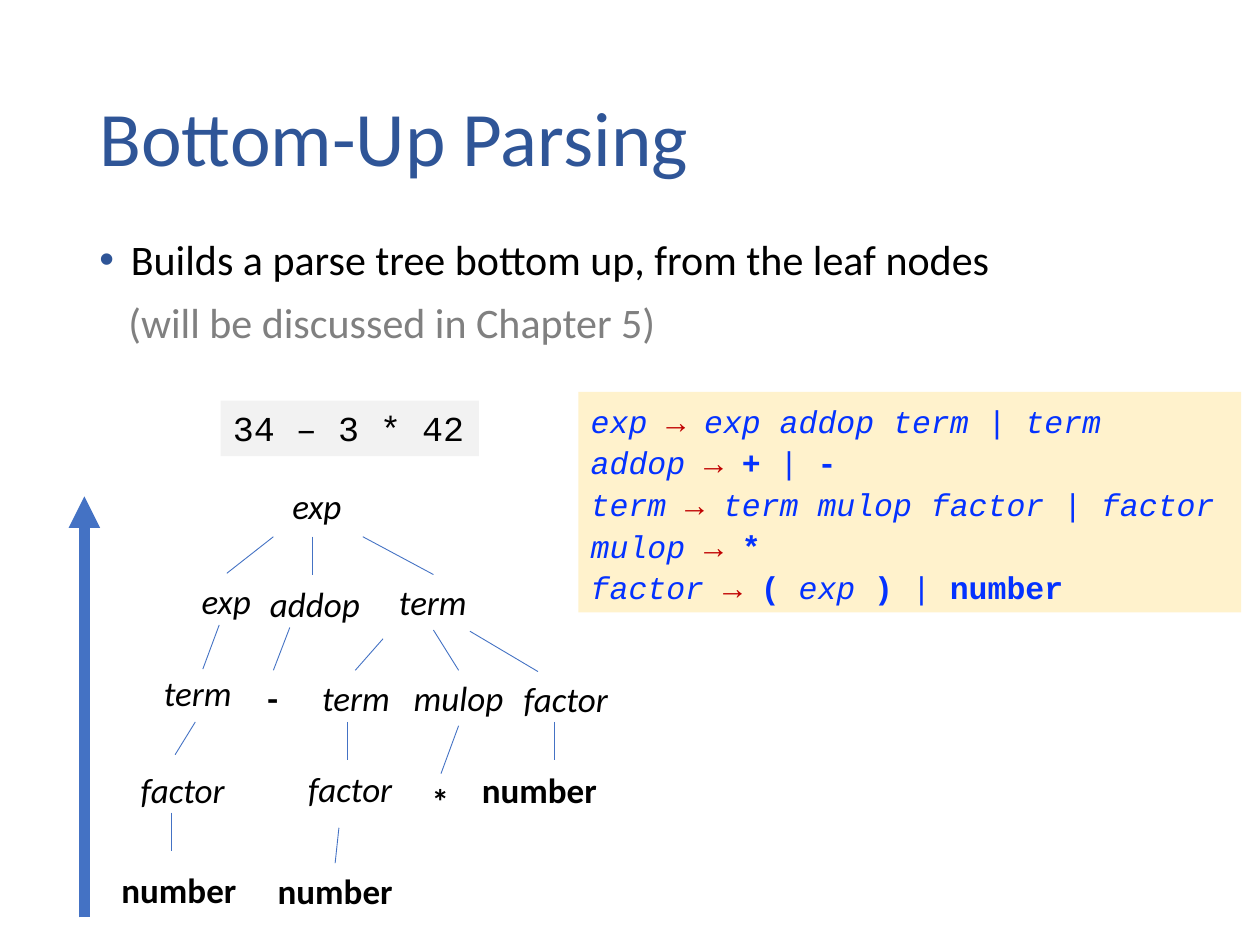
import lxml.etree
import pptx
import pptx.util
import pptx.dml.color
import pptx.enum.shapes
import pptx.enum.text
import pptx.oxml.ns
from typing import NamedTuple

Inches = pptx.util.Inches
Pt = pptx.util.Pt
Align = pptx.enum.text.PP_ALIGN

COLORS = {
    "title": "2F5597", "text": "000000", "muted": "808080",
    "branch": "4472C4", "input": "F2F2F2", "grammar": "FFF2CC",
    "rule": "0432FF", "arrow": "C00000",
}


class Node(NamedTuple):
    label: str
    left: float
    top: float
    width: float
    terminal: bool = False


class Branch(NamedTuple):
    x1: float
    y1: float
    x2: float
    y2: float


class Token(NamedTuple):
    text: str
    color: str = "rule"
    bold: bool = False
    italic: bool = False


def symbol(text: str) -> Token:
    return Token(text, italic=True)


def terminal(text: str) -> Token:
    return Token(text, bold=True)


ARROW = Token("→ ", "arrow")
BAR = Token("| ")

GRAMMAR = [
    [symbol("exp "), ARROW, symbol("exp addop term "), BAR, symbol("term")],
    [symbol("addop "), ARROW, terminal("+ "), BAR, terminal("-")],
    [symbol("term "), ARROW, symbol("term mulop factor "), BAR, symbol("factor")],
    [symbol("mulop "), ARROW, terminal("*")],
    [symbol("factor "), ARROW, terminal("("), symbol(" exp "), terminal(") "),
     BAR, terminal("number")],
]

NODES = [
    Node("exp", 2.22, 3.8, 0.59),
    Node("exp", 1.5, 4.55, 0.59),
    Node("addop", 1.97, 4.57, 1.06),
    Node("term", 3.06, 4.56, 0.75),
    Node("term", 1.12, 5.28, 0.9),
    Node("-", 1.97, 5.32, 0.39, True),
    Node("term", 2.45, 5.32, 0.75),
    Node("mulop", 3.15, 5.32, 0.98),
    Node("factor", 4.05, 5.33, 0.88),
    Node("factor", 1.01, 6.05, 0.88),
    Node("factor", 2.25, 6.04, 1.06),
    Node("*", 3.3, 6.14, 0.39, True),
    Node("number", 3.72, 6.05, 1.12, True),
    Node("number", 0.86, 6.84, 1.12, True),
    Node("number", 2.1, 6.85, 1.12, True),
]

BRANCHES = [
    Branch(2.17, 4.26, 1.8, 4.55),
    Branch(2.48, 4.26, 2.48, 4.56),
    Branch(2.88, 4.26, 3.44, 4.56),
    Branch(1.74, 4.96, 1.61, 5.31),
    Branch(2.3, 4.98, 2.17, 5.32),
    Branch(3.04, 5.07, 2.82, 5.32),
    Branch(3.44, 5, 3.64, 5.32),
    Branch(3.73, 5.01, 4.27, 5.33),
    Branch(1.55, 5.73, 1.39, 5.99),
    Branch(2.76, 5.73, 2.76, 6.03),
    Branch(3.64, 5.76, 3.5, 6.14),
    Branch(4.4, 5.73, 4.4, 6.03),
    Branch(1.36, 6.45, 1.36, 6.75),
    Branch(2.69, 6.57, 2.66, 6.85),
]


def rgb(name: str) -> pptx.dml.color.RGBColor:
    return pptx.dml.color.RGBColor.from_string(COLORS[name])


def add_element(parent, tag: str, **attributes: str):
    return lxml.etree.SubElement(parent, pptx.oxml.ns.qn(tag), attributes)


def format_run(run, size: float, color: str, face: str = "Calibri",
               bold: bool = False, italic: bool = False) -> None:
    run.font.size = Pt(size)
    run.font.name = face
    run.font.bold = bold
    run.font.italic = italic
    run.font.color.rgb = rgb(color)


def add_branch(slide, branch: Branch, width: float = 0.5, arrowhead: bool = False) -> None:
    line = slide.shapes.add_connector(
        pptx.enum.shapes.MSO_CONNECTOR.STRAIGHT, *map(Inches, branch))
    line.line.color.rgb = rgb("branch")
    line.line.width = Pt(width)
    properties = line._element.spPr
    if arrowhead:
        add_element(properties.find(pptx.oxml.ns.qn("a:ln")), "a:tailEnd", type="triangle")
    add_element(properties, "a:effectLst")


def add_node(slide, node: Node) -> None:
    frame = slide.shapes.add_textbox(
        Inches(node.left), Inches(node.top), Inches(node.width), Inches(0.44)).text_frame
    frame.word_wrap = False
    frame.text = node.label
    frame.paragraphs[0].alignment = Align.CENTER
    format_run(frame.paragraphs[0].runs[0], 20, "text",
               bold=node.terminal, italic=not node.terminal)


def add_panel(slide, left: float, top: float, width: float, height: float, fill: str):
    panel = slide.shapes.add_shape(
        pptx.enum.shapes.MSO_SHAPE.RECTANGLE,
        Inches(left), Inches(top), Inches(width), Inches(height))
    panel.shadow.inherit = False
    panel.fill.solid()
    panel.fill.fore_color.rgb = rgb(fill)
    panel.line.fill.background()
    panel.text_frame.vertical_anchor = pptx.enum.text.MSO_ANCHOR.TOP
    return panel.text_frame


def add_title(slide) -> None:
    title = slide.shapes.title
    title.left, title.top, title.width, title.height = map(Inches, (0.69, 0.4, 8.62, 1.45))
    title.text_frame.text = "Bottom-Up Parsing"
    title.text_frame.vertical_anchor = pptx.enum.text.MSO_ANCHOR.MIDDLE
    heading = title.text_frame.paragraphs[0]
    heading.alignment = Align.LEFT
    heading.line_spacing = 0.9
    format_run(heading.runs[0], 44, "title")


def add_summary(slide) -> None:
    frame = slide.shapes.add_textbox(*map(Inches, (0.69, 1.85, 9.31, 1.14))).text_frame
    frame.word_wrap = True
    frame.text = ("Builds a parse tree bottom up, from the leaf nodes\n"
                  "(will be discussed in Chapter 5)")
    claim, remark = frame.paragraphs
    for paragraph, color, margin in ((claim, "text", 0.25), (remark, "muted", 0.23)):
        paragraph.line_spacing = 0.9
        paragraph.space_before = Pt(10)
        paragraph._p.get_or_add_pPr().set("marL", str(Inches(margin)))
        format_run(paragraph.runs[0], 24, color)
    properties = claim._p.get_or_add_pPr()
    properties.set("indent", str(Inches(-0.25)))
    add_element(add_element(properties, "a:buClr"), "a:srgbClr", val=COLORS["title"])
    add_element(properties, "a:buFont", typeface="Arial")
    add_element(properties, "a:buChar", char="•")


def add_grammar(slide) -> None:
    frame = add_panel(slide, 4.59, 3.11, 5.26, 1.75, "grammar")
    frame.word_wrap = True
    for index, rule in enumerate(GRAMMAR):
        paragraph = frame.add_paragraph() if index else frame.paragraphs[0]
        paragraph.alignment = Align.LEFT
        paragraph.line_spacing = 1.1
        for token in rule:
            run = paragraph.add_run()
            run.text = token.text
            format_run(run, 18, token.color, "Courier New", token.bold, token.italic)


def add_input(slide) -> None:
    frame = add_panel(slide, 1.75, 3.18, 2.05, 0.44, "input")
    frame.word_wrap = False
    frame.text = "34 – 3 * 42"
    frame.paragraphs[0].alignment = Align.LEFT
    format_run(frame.paragraphs[0].runs[0], 20, "text", "Courier New")


def main() -> None:
    deck = pptx.Presentation()
    deck.slide_width, deck.slide_height = Inches(10), Inches(7.5)
    slide = deck.slides.add_slide(deck.slide_layouts[5])
    add_title(slide)
    add_summary(slide)
    for branch in BRANCHES:
        add_branch(slide, branch)
    for node in NODES:
        add_node(slide, node)
    add_branch(slide, Branch(0.67, 7.28, 0.67, 3.94), width=6, arrowhead=True)
    add_input(slide)
    add_grammar(slide)
    deck.save("out.pptx")


if __name__ == "__main__":
    main()
